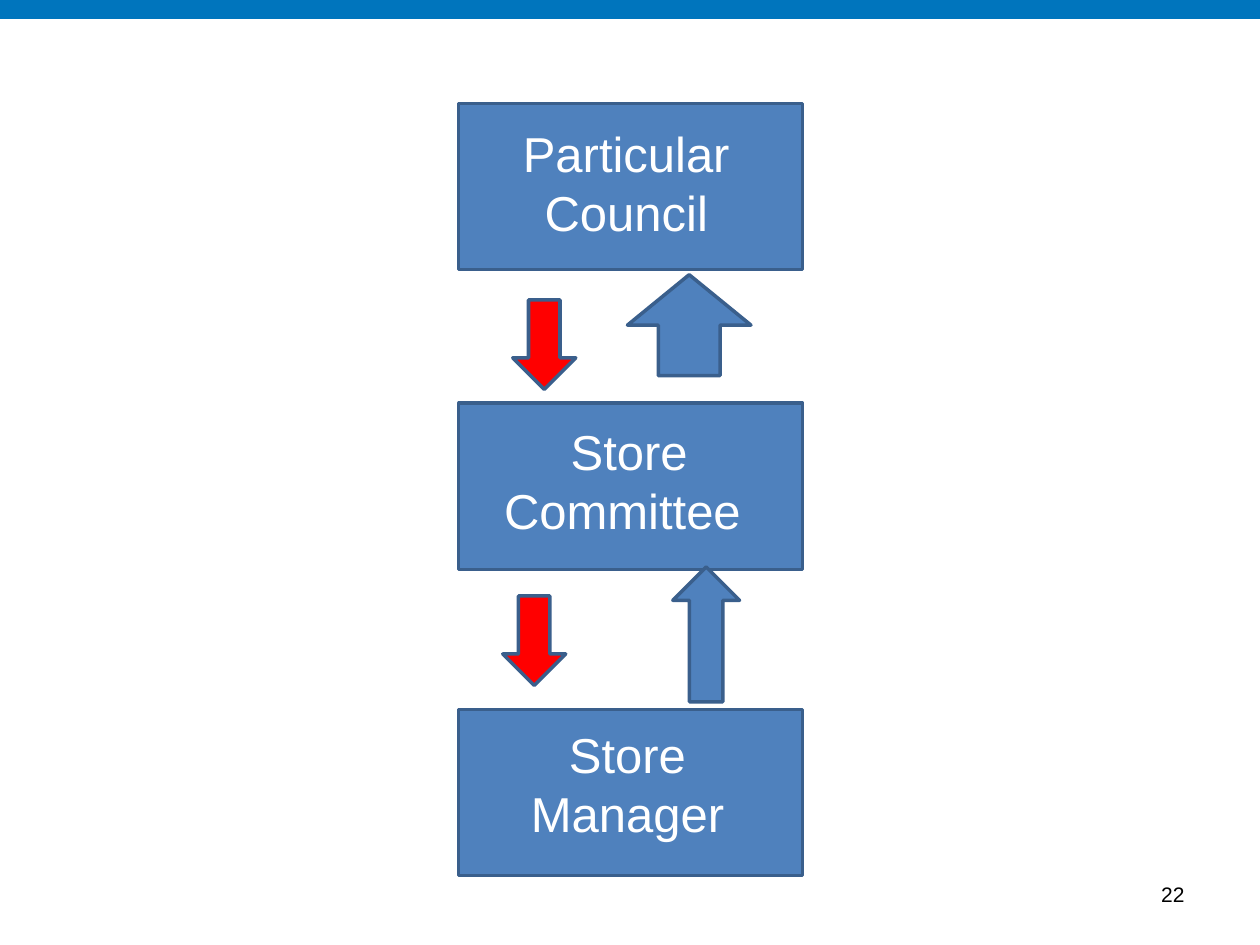
from dataclasses import dataclass

from pptx import Presentation
from pptx.dml.color import RGBColor as Color
from pptx.enum.shapes import MSO_SHAPE as Preset
from pptx.enum.text import MSO_AUTO_SIZE as Fit, PP_ALIGN as Align
from pptx.util import Inches, Pt

WIDTH, HEIGHT = 10, 7.5


@dataclass(frozen=True)
class Theme:
    band: str = "0075BD"
    box: str = "4F81BD"
    outline: str = "3A5F8C"
    down: str = "FF0000"
    light: str = "FFFFFF"
    dark: str = "000000"
    font: str = "Arial"
    label_size: int = 28
    number_size: int = 12
    outline_width: int = 2


THEME = Theme()


def place(left, top, width, height):
    across = [Inches(WIDTH * share / 100) for share in (left, width)]
    down = [Inches(HEIGHT * share / 100) for share in (top, height)]
    return across[0], down[0], across[1], down[1]


def add_block(page, preset, area, fill, outline=THEME.outline):
    block = page.shapes.add_shape(preset, *place(*area))
    block.shadow.inherit = False
    block.fill.solid()
    block.fill.fore_color.rgb = Color.from_string(fill)
    if outline:
        block.line.color.rgb = Color.from_string(outline)
        block.line.width = Pt(THEME.outline_width)
    else:
        block.line.fill.background()


def add_text(page, lines, area, size=THEME.label_size, color=THEME.light,
             align=Align.CENTER, wrap=True, fit=Fit.SHAPE_TO_FIT_TEXT):
    frame = page.shapes.add_textbox(*place(*area)).text_frame
    frame.word_wrap = wrap
    frame.auto_size = fit
    for index, line in enumerate(lines):
        para = frame.add_paragraph() if index else frame.paragraphs[0]
        para.alignment = align
        span = para.add_run()
        span.text = line
        span.font.name = THEME.font
        span.font.size = Pt(size)
        span.font.color.rgb = Color.from_string(color)


def main():
    deck = Presentation()
    deck.slide_width, deck.slide_height = Inches(WIDTH), Inches(HEIGHT)
    page = deck.slides.add_slide(deck.slide_layouts[6])

    add_block(page, Preset.RECTANGLE, (0, 0, 100, 2), THEME.band, outline=None)
    add_text(page, ["22"], (71.7, 92.67, 23.3, 5.33), size=THEME.number_size,
             color=THEME.dark, align=Align.RIGHT, fit=Fit.NONE)

    for top in (10.93, 42.67, 75.07):
        add_block(page, Preset.RECTANGLE, (36.4, top, 27.3, 17.6), THEME.box)

    for left, top in ((40.7, 31.73), (39.9, 63.07)):
        add_block(page, Preset.DOWN_ARROW, (left, top, 5, 9.47), THEME.down)

    labels = (
        (["Particular Council"], 39.1, 12.4, 21.2, True),
        ([" Store", "Committee"], 38.9, 44, 21, False),
        (["Store", "Manager"], 41, 76, 17.6, False),
    )
    for lines, left, top, width, wrap in labels:
        add_text(page, lines, (left, top, width, 13.87), wrap=wrap)

    for area in ((49.8, 29.07, 9.8, 10.67), (53.4, 60, 5.3, 14.27)):
        add_block(page, Preset.UP_ARROW, area, THEME.box)

    deck.save("out.pptx")


if __name__ == "__main__":
    main()
